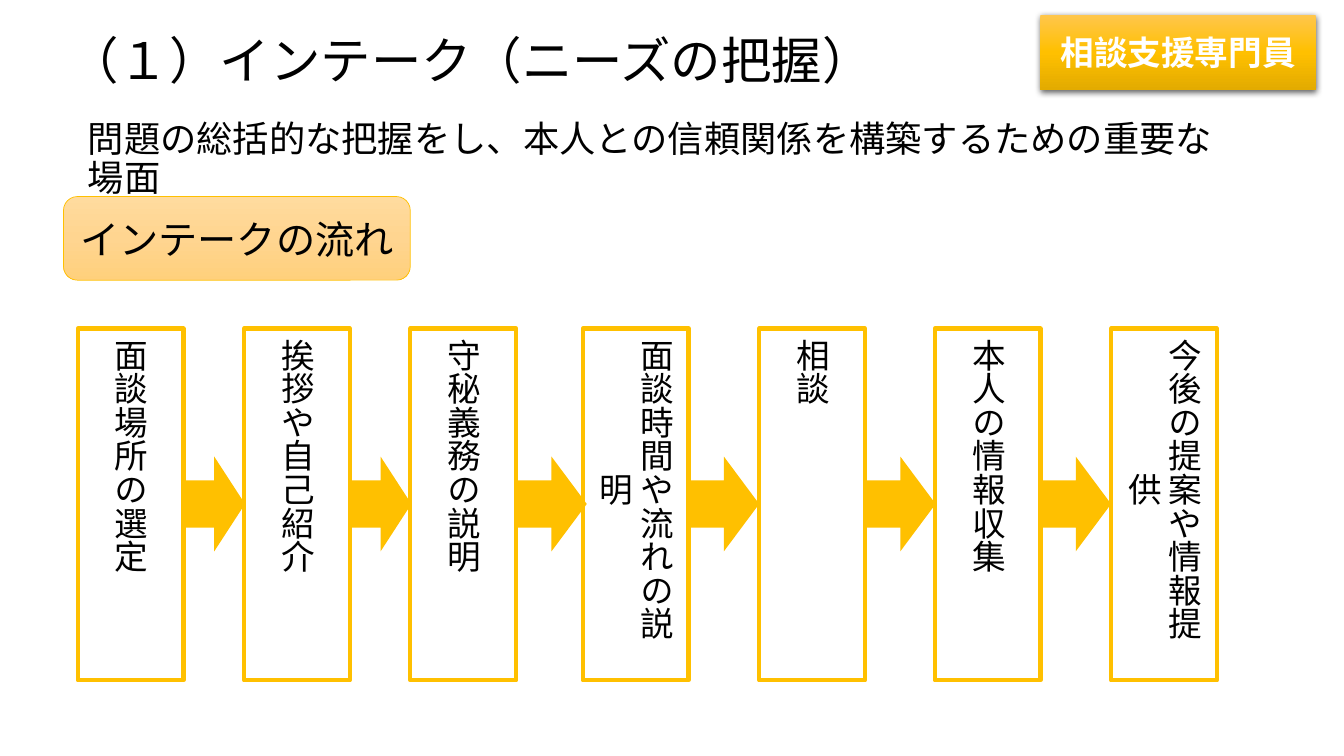
from copy import deepcopy

from lxml import etree
from pptx import Presentation
from pptx.dml.color import RGBColor
from pptx.enum.shapes import MSO_SHAPE
from pptx.enum.text import MSO_ANCHOR, MSO_AUTO_SIZE, PP_ALIGN
from pptx.oxml.ns import qn
from pptx.util import Inches, Pt

RECT = MSO_SHAPE.RECTANGLE
ROUNDED = MSO_SHAPE.ROUNDED_RECTANGLE
ARROW = MSO_SHAPE.RIGHT_ARROW
LEFT, CENTER = PP_ALIGN.LEFT, PP_ALIGN.CENTER
TOP, MIDDLE = MSO_ANCHOR.TOP, MSO_ANCHOR.MIDDLE
NO_AUTOFIT = MSO_AUTO_SIZE.NONE

STEPS = [
    ("面談場所の選定", 0.77),
    ("挨拶や自己紹介", 2.42),
    ("守秘義務の説明", 4.07),
    ("面談時間や流れの説明", 5.78),
    ("相談", 7.53),
    ("本人の情報収集", 9.27),
    ("今後の提案や情報提供", 11.02),
]
STEP_WIDTH = 1.05
ARROW_WIDTHS = [0.61] * 2 + [0.7] * 4


def color(hex_value):
    return RGBColor.from_string(hex_value)


def write(shape, text, size, ink="000000", bold=False, align=CENTER,
          anchor=MIDDLE, spacing=None, before=None, vertical=False):
    """Put one formatted paragraph of text into a shape."""
    frame = shape.text_frame
    frame.auto_size = NO_AUTOFIT
    frame.word_wrap = True
    frame.vertical_anchor = anchor
    if vertical:
        frame._txBody.bodyPr.set("vert", "eaVert")
    paragraph = frame.paragraphs[0]
    paragraph.alignment = align
    paragraph.line_spacing = spacing
    if before is not None:
        paragraph.space_before = Pt(before)
    run = paragraph.add_run()
    run.text = text
    font = run.font
    font.size, font.bold, font.name = Pt(size), bold, Deck.font
    font.color.rgb = color(ink)
    east_asian = etree.SubElement(run._r.get_or_add_rPr(), qn("a:ea"))
    east_asian.set("typeface", Deck.font)


class Deck:
    font = "Noto Sans CJK JP"
    accent = "FFC000"

    def __init__(self):
        self.presentation = Presentation()
        self.presentation.slide_width = Inches(13.33)
        self.presentation.slide_height = Inches(7.5)
        layout = self.presentation.slide_layouts[1]
        self.slide = self.presentation.slides.add_slide(layout)

    def placeholder(self, index, box, text, size, **text_format):
        holder = self.slide.placeholders[index]
        holder.left, holder.top, holder.width, holder.height = map(Inches, box)
        write(holder, text, size, align=LEFT, spacing=0.9, **text_format)
        return holder

    def body(self, box, text, size):
        holder = self.placeholder(1, box, text, size, anchor=TOP, before=10)
        properties = holder.text_frame.paragraphs[0]._p.get_or_add_pPr()
        properties.set("marL", "0")
        properties.set("indent", "0")
        etree.SubElement(properties, qn("a:buNone"))

    def shape(self, kind, box, fill, line_width=0):
        """Add a shape; a list of colours as fill makes a downward gradient."""
        shape = self.slide.shapes.add_shape(kind, *map(Inches, box))
        shape.shadow.inherit = False
        if isinstance(fill, list):
            self.gradient(shape.fill, fill)
        else:
            shape.fill.solid()
            shape.fill.fore_color.rgb = color(fill)
        if line_width:
            shape.line.color.rgb = color(self.accent)
            shape.line.width = Pt(line_width)
        else:
            shape.line.fill.background()
        return shape

    def gradient(self, fill, colors):
        fill.gradient()
        fill.gradient_angle = 270
        first = fill.gradient_stops[0]._gs
        first.addnext(deepcopy(first))
        for i, (stop, hex_value) in enumerate(zip(fill.gradient_stops, colors)):
            stop.position = i / (len(colors) - 1)
            stop.color.rgb = color(hex_value)

    def cast_shadow(self, shape):
        effects = shape._element.spPr.find(qn("a:effectLst"))
        shadow = etree.SubElement(
            effects, qn("a:outerShdw"), blurRad=str(Pt(4.5)), dist=str(Pt(1.5)),
            dir="5400000", algn="ctr", rotWithShape="0")
        black = etree.SubElement(shadow, qn("a:srgbClr"), val="000000")
        etree.SubElement(black, qn("a:alpha"), val="63000")


def main():
    deck = Deck()
    deck.placeholder(0, (0.58, 0.34, 12.18, 0.57),
                     "（１）インテーク（ニーズの把握）", 36)
    deck.body((0.77, 1.15, 11.5, 0.55),
              "問題の総括的な把握をし、本人との信頼関係を構築するための重要な場面", 25.9)

    flow_heading = deck.shape(ROUNDED, (0.63, 1.95, 3.44, 0.83),
                              ["FFDB9E", "FFD590", "FFD07C"], 0.5)
    write(flow_heading, "インテークの流れ", 28)

    for step, left in STEPS:
        step_box = deck.shape(RECT, (left, 3.26, STEP_WIDTH, 3.49), "FFFFFF", 3)
        write(step_box, step, 24, vertical=True)
    for (_, left), width in zip(STEPS, ARROW_WIDTHS):
        deck.shape(ARROW, (left + STEP_WIDTH, 4.53, width, 0.94), deck.accent)

    role = deck.shape(RECT, (10.32, 0.15, 2.73, 0.74),
                      ["FFC64B", deck.accent, "E3AB00"])
    deck.cast_shadow(role)
    write(role, "相談支援専門員", 24, ink="FFFFFF", bold=True)

    deck.presentation.save("out.pptx")


if __name__ == "__main__":
    main()
